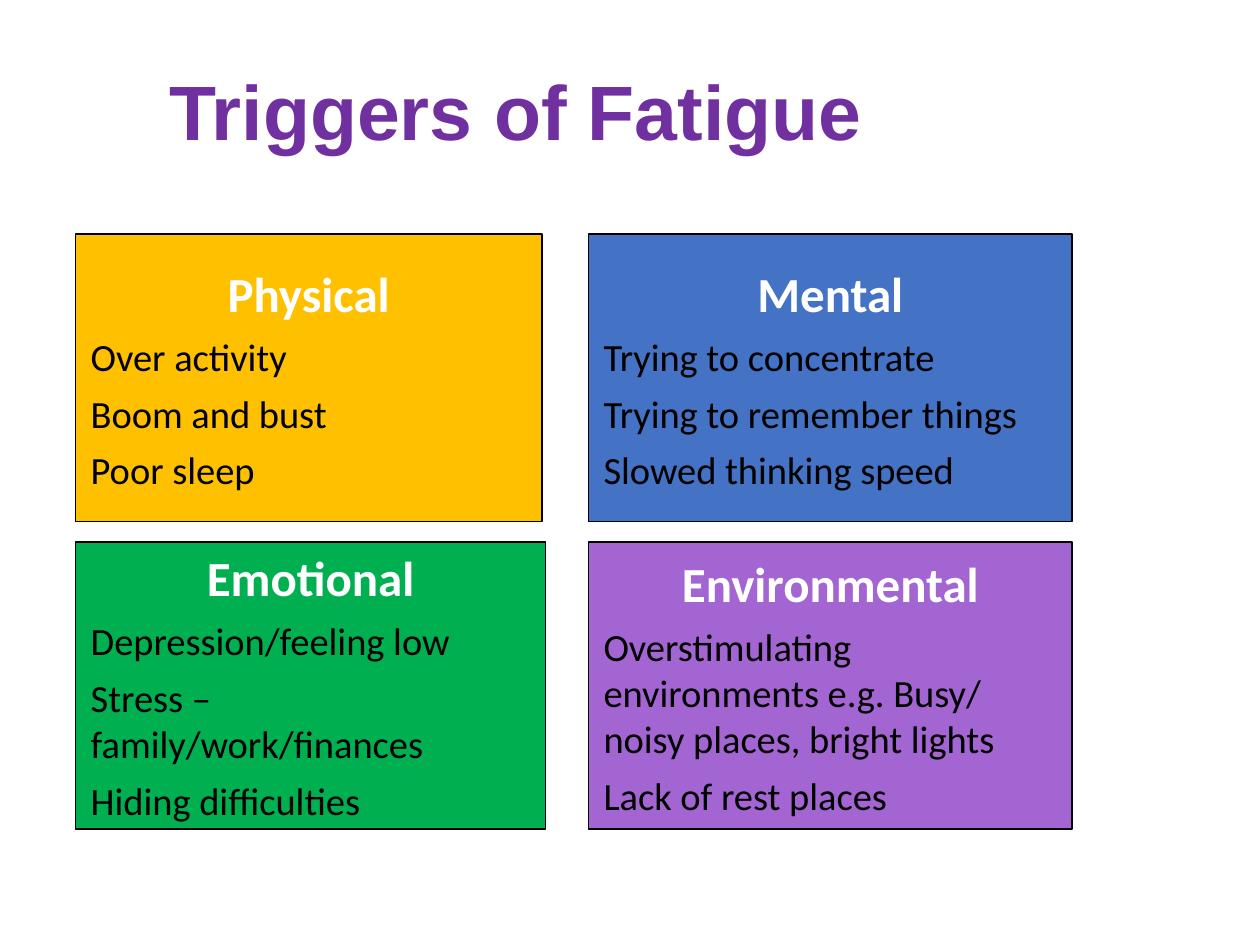
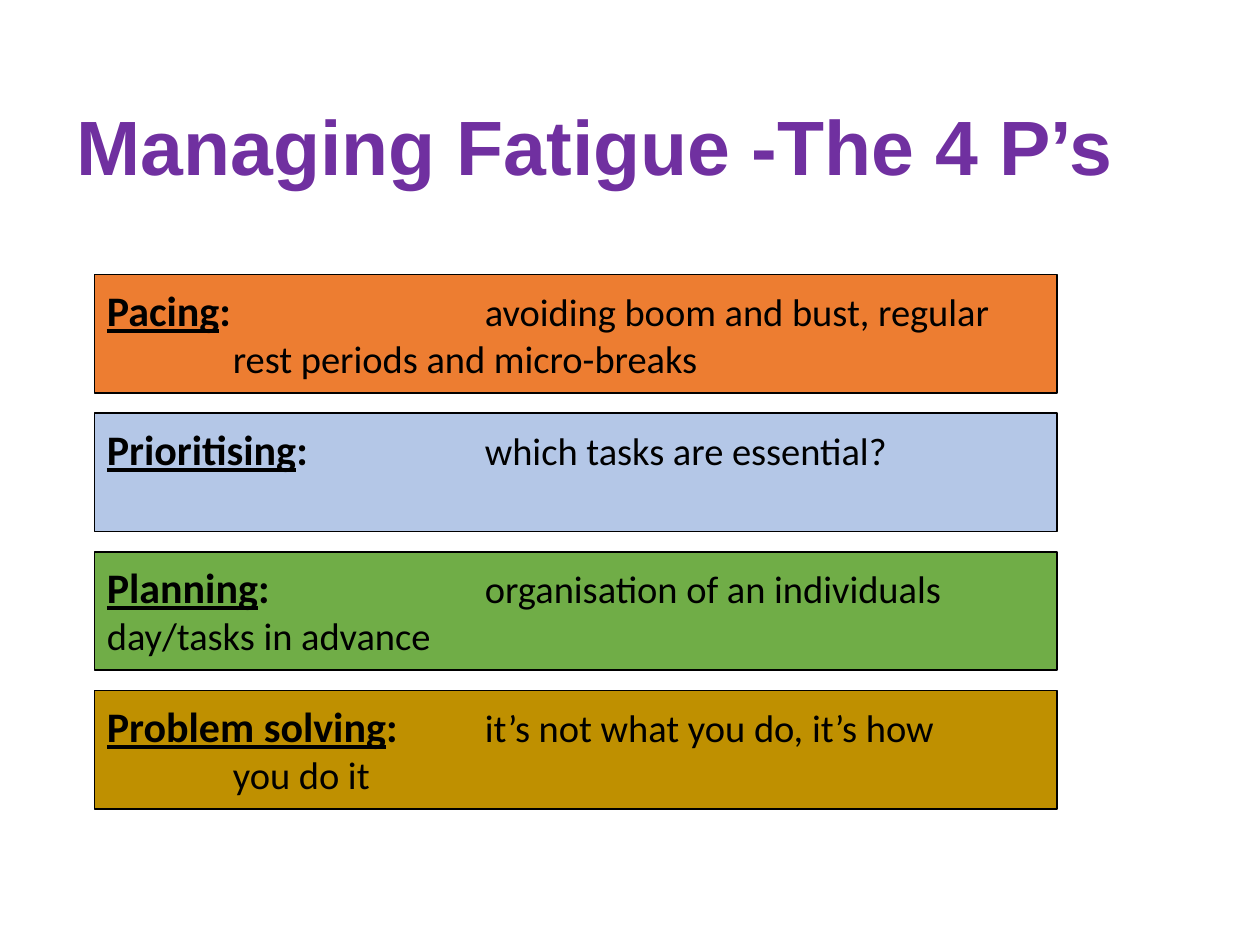
from dataclasses import dataclass

from lxml.etree import SubElement
from pptx import Presentation
from pptx.dml.color import RGBColor
from pptx.enum.shapes import MSO_SHAPE as Preset
from pptx.enum.text import MSO_ANCHOR as Anchor, PP_ALIGN as Align
from pptx.oxml.ns import qn
from pptx.util import Emu, Inches, Pt

SLIDE_WIDTH, SLIDE_HEIGHT = Inches(10), Inches(7.5)
COLUMNS, ROWS = 100, 75
BLACK, WHITE, PURPLE = "000000", "FFFFFF", "7030A0"

TITLE = {"name": "Arial", "size": Pt(44), "bold": True}
HEADING = {"name": "Calibri", "size": Pt(28), "bold": True}
BODY = {"name": "Calibri", "size": Pt(22), "bold": False}
COLON = {"name": "Calibri", "size": Pt(24), "bold": True}
STRATEGY = COLON | {"underline": True}


@dataclass(frozen=True)
class Area:
    column: float
    row: float
    width: float
    height: float

    def box(self) -> tuple:
        across, down = SLIDE_WIDTH / COLUMNS, SLIDE_HEIGHT / ROWS
        return (Emu(round(self.column * across)), Emu(round(self.row * down)),
                Emu(round(self.width * across)), Emu(round(self.height * down)))


@dataclass(frozen=True)
class Trigger:
    heading: str
    fill: str
    width: float
    causes: tuple


@dataclass(frozen=True)
class Principle:
    strategy: str
    fill: str
    advice: str
    continuation: str = ""


TRIGGERS = (
    Trigger("Physical", "FFC000", 37,
            ("Over activity", "Boom and bust", "Poor sleep")),
    Trigger("Mental", "4472C4", 38.4,
            ("Trying to concentrate", "Trying to remember things",
             "Slowed thinking speed")),
    Trigger("Emotional", "00B050", 37.3,
            ("Depression/feeling low", "Stress – family/work/finances",
             "Hiding difficulties")),
    Trigger("Environmental", "A365D1", 38.4,
            ("Overstimulating environments e.g. Busy/ noisy places, bright lights",
             "Lack of rest places")),
)
PRINCIPLES = (
    Principle("Pacing", "ED7D31", "avoiding boom and bust, regular",
              "\trest periods and micro-breaks"),
    Principle("Prioritising", "B4C7E7", "which tasks are essential?"),
    Principle("Planning", "70AD47", "organisation of an individuals",
              "day/tasks in advance"),
    Principle("Problem solving", "BF9000", "it’s not what you do, it’s how",
              "\tyou do it"),
)


def color(value: str) -> RGBColor:
    return RGBColor.from_string(value)


def apply(target, values: dict) -> None:
    for attribute, value in values.items():
        setattr(target, attribute, value)


def write(paragraph, text: str, style: dict, shade: str = BLACK) -> None:
    run = paragraph.add_run()
    run.text = text
    apply(run.font, style)
    run.font.color.rgb = color(shade)


def add_title(slide, area: Area, text: str, align: Align) -> None:
    frame = slide.shapes.add_textbox(*area.box()).text_frame
    apply(frame, {"word_wrap": True, "vertical_anchor": Anchor.MIDDLE})
    heading = frame.paragraphs[0]
    apply(heading, {"alignment": align, "line_spacing": 0.9})
    write(heading, text, TITLE, PURPLE)


def add_panel(slide, area: Area, fill: str, layout: dict):
    panel = slide.shapes.add_shape(Preset.RECTANGLE, *area.box())
    panel.shadow.inherit = False
    panel.fill.solid()
    panel.fill.fore_color.rgb = color(fill)
    panel.line.color.rgb = color(BLACK)
    panel.line.width = Pt(1)
    apply(panel.text_frame, {"word_wrap": True} | layout)
    return panel.text_frame


def add_trigger(slide, area: Area, trigger: Trigger) -> None:
    sides = ("left", "top", "right", "bottom")
    layout = {f"margin_{side}": Inches(0.12) for side in sides}
    layout["vertical_anchor"] = Anchor.MIDDLE
    frame = add_panel(slide, area, trigger.fill, layout)
    heading = frame.paragraphs[0]
    apply(heading, {"alignment": Align.CENTER, "space_after": Pt(6)})
    write(heading, trigger.heading, HEADING, WHITE)
    for cause in trigger.causes:
        line = frame.add_paragraph()
        apply(line, {"alignment": Align.LEFT, "space_after": Pt(6)})
        write(line, cause, BODY)


def set_tabs(paragraph, *inches: float) -> None:
    stops = SubElement(paragraph._p.get_or_add_pPr(), qn("a:tabLst"))
    for stop in inches:
        SubElement(stops, qn("a:tab"), pos=str(Inches(stop)), algn="l")


def add_principle(slide, area: Area, principle: Principle) -> None:
    layout = {"vertical_anchor": Anchor.TOP, "margin_top": Inches(0.08)}
    frame = add_panel(slide, area, principle.fill, layout)
    line = frame.paragraphs[0]
    line.alignment = Align.LEFT
    set_tabs(line, 1, 3)
    write(line, principle.strategy, STRATEGY)
    write(line, ": \t", COLON)
    write(line, principle.advice, BODY)
    if principle.continuation:
        line.add_line_break()
        write(line, principle.continuation, BODY)


def build_triggers(slide) -> None:
    add_title(slide, Area(5.9, 2.9, 70.1, 12.5), "Triggers of Fatigue", Align.CENTER)
    for index, trigger in enumerate(TRIGGERS):
        row, column = divmod(index, 2)
        area = Area(6 + column * 40.7, 18.6 + row * 24.4, trigger.width, 22.8)
        add_trigger(slide, area, trigger)


def build_principles(slide) -> None:
    add_title(slide, Area(5.1, 7.6, 89, 8.7), "Managing Fatigue -The 4 P’s", Align.LEFT)
    for index, principle in enumerate(PRINCIPLES):
        add_principle(slide, Area(7.5, 21.8 + index * 11, 76.4, 9.4), principle)


def main() -> None:
    deck = Presentation()
    apply(deck, {"slide_width": SLIDE_WIDTH, "slide_height": SLIDE_HEIGHT})
    blank = deck.slide_layouts[6]
    for build in (build_triggers, build_principles):
        build(deck.slides.add_slide(blank))
    deck.save("out.pptx")


if __name__ == "__main__":
    main()
